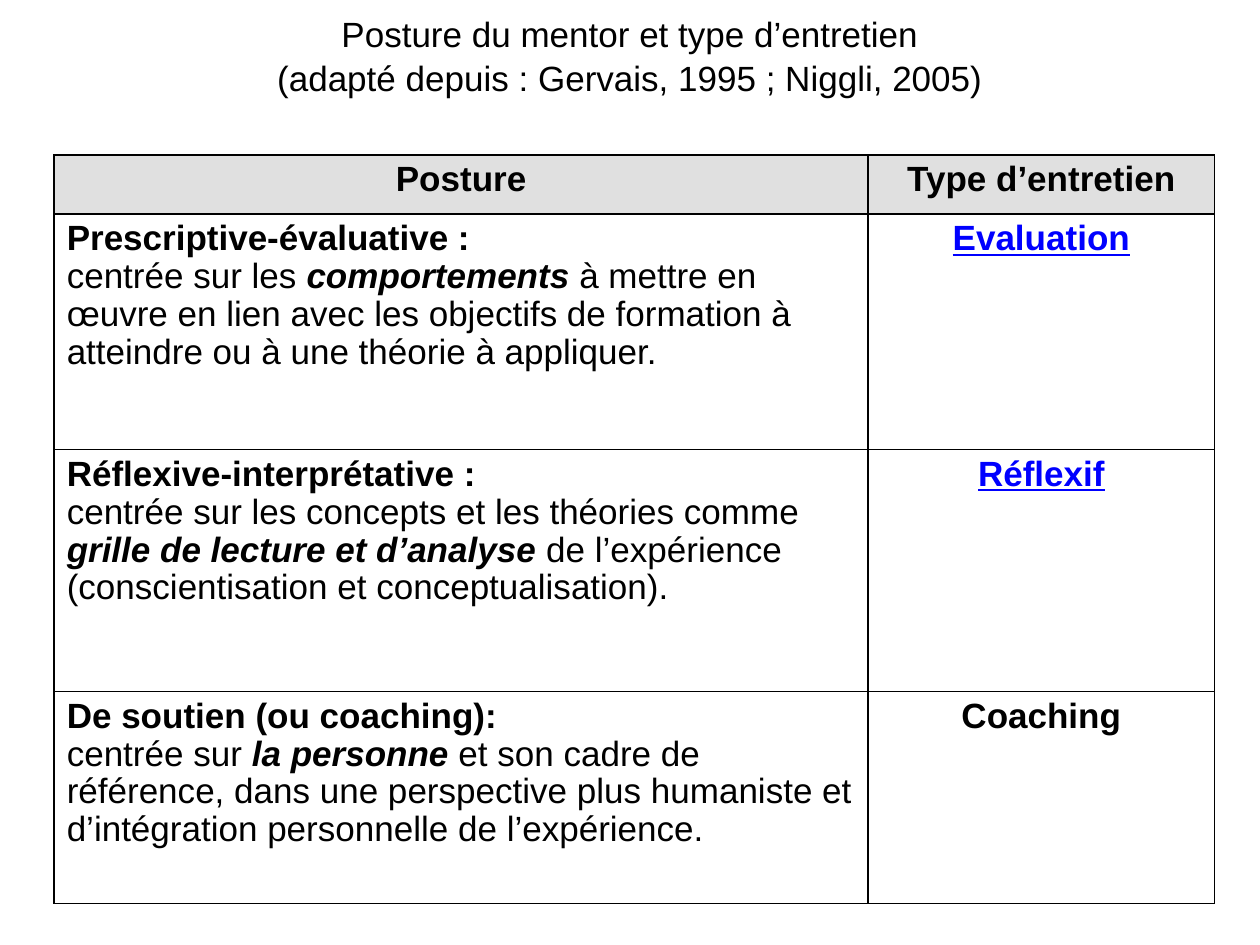
from dataclasses import dataclass

from lxml import etree
from pptx import Presentation
from pptx import util as u
from pptx.dml.color import RGBColor
from pptx.enum import text
from pptx.oxml import ns


@dataclass(frozen=True)
class Theme:
    """Colours, font and sizes of the slide."""
    font: str = "Arial"
    size: int = 20
    ink: str = "000000"
    link: str = "0000FF"
    header: str = "E0E0E0"
    border: int = 1


THEME = Theme()
BOLD = {"bold": True}
STRESS = {"bold": True, "italic": True}
LINK = {"bold": True, "underline": True, "color": THEME.link}
CENTER = text.PP_ALIGN.CENTER
LEFT = text.PP_ALIGN.LEFT

COLUMNS = (6.46, 2.75)
ROWS = (0.47, 1.87, 1.92, 1.68)
HEADERS = ("Posture", "Type d’entretien")
POSTURES = (
    ("Prescriptive-évaluative :",
     ("centrée sur les ", "comportements",
      " à mettre en œuvre en lien avec les objectifs de formation à "
      "atteindre ou à une théorie à appliquer."),
     "Evaluation", LINK),
    ("Réflexive-interprétative :",
     ("centrée sur les concepts et les théories comme ",
      "grille de lecture et d’analyse",
      " de l’expérience (conscientisation et conceptualisation)."),
     "Réflexif", LINK),
    ("De soutien (ou coaching):",
     ("centrée sur ", "la personne",
      " et son cadre de référence, dans une perspective plus humaniste et "
      "d’intégration personnelle de l’expérience."),
     "Coaching", BOLD),
)


def format_font(font, color=THEME.ink, **values):
    """Apply the theme font and the given format values."""
    values = {"name": THEME.font, "size": u.Pt(THEME.size), "bold": False, **values}
    for name, value in values.items():
        setattr(font, name, value)
    font.color.rgb = RGBColor.from_string(color)


def fill_paragraph(paragraph, runs, alignment=LEFT, spacing=0.97):
    """Write (wording, format) runs into a paragraph."""
    paragraph.alignment = alignment
    paragraph.line_spacing = spacing
    for wording, values in runs:
        run = paragraph.add_run()
        run.text = wording
        format_font(run.font, **values)


def add_title(slide, lines):
    """Place the title with its lines split by line breaks."""
    title = slide.shapes.title
    title.left, title.top = u.Inches(0.5), u.Inches(0.05)
    title.width, title.height = u.Inches(9), u.Inches(0.77)
    frame = title.text_frame
    frame.word_wrap = True
    frame.auto_size = text.MSO_AUTO_SIZE.NONE
    frame.vertical_anchor = text.MSO_ANCHOR.MIDDLE
    paragraph = frame.paragraphs[0]
    paragraph.text = "\v".join(lines)
    paragraph.alignment = CENTER
    paragraph.line_spacing = 1.05
    for run in paragraph.runs:
        format_font(run.font)


def draw_borders(cell):
    """Draw a solid line on each side of a cell."""
    properties = cell._tc.get_or_add_tcPr()
    for position, side in enumerate(("lnL", "lnR", "lnT", "lnB")):
        line = etree.Element(ns.qn(f"a:{side}"), w=str(u.Pt(THEME.border)))
        fill = etree.SubElement(line, ns.qn("a:solidFill"))
        etree.SubElement(fill, ns.qn("a:srgbClr"), val=THEME.ink)
        properties.insert(position, line)


def fill_cell(cell, paragraphs, alignment=LEFT, color=None):
    """Write paragraphs of runs into a bordered cell."""
    if color:
        cell.fill.solid()
        cell.fill.fore_color.rgb = RGBColor.from_string(color)
    else:
        cell.fill.background()
    draw_borders(cell)
    frame = cell.text_frame
    for index, runs in enumerate(paragraphs):
        paragraph = frame.add_paragraph() if index else frame.paragraphs[0]
        fill_paragraph(paragraph, runs, alignment)


def add_posture_table(slide):
    """Add the table of postures and interview types."""
    table = slide.shapes.add_table(
        len(ROWS), len(COLUMNS), u.Inches(0.43), u.Inches(1.23),
        u.Inches(sum(COLUMNS)), u.Inches(sum(ROWS))).table
    table.horz_banding = False
    for column, width in zip(table.columns, COLUMNS):
        column.width = u.Inches(width)
    for row, height in zip(table.rows, ROWS):
        row.height = u.Inches(height)
    for index, header in enumerate(HEADERS):
        fill_cell(table.cell(0, index), [[(header, BOLD)]], CENTER, THEME.header)
    for index, (name, wording, kind, style) in enumerate(POSTURES, 1):
        description = list(zip(wording, ({}, STRESS, {})))
        fill_cell(table.cell(index, 0), [[(name, BOLD)], description])
        fill_cell(table.cell(index, 1), [[(kind, style)]], CENTER)


def main():
    """Build and save the slide."""
    presentation = Presentation()
    presentation.slide_width = u.Inches(10)
    presentation.slide_height = u.Inches(7.5)
    slide = presentation.slides.add_slide(presentation.slide_layouts[5])
    add_title(slide, ("Posture du mentor et type d’entretien",
                      "(adapté depuis : Gervais, 1995 ; Niggli, 2005)"))
    add_posture_table(slide)
    presentation.save("out.pptx")


if __name__ == "__main__":
    main()
